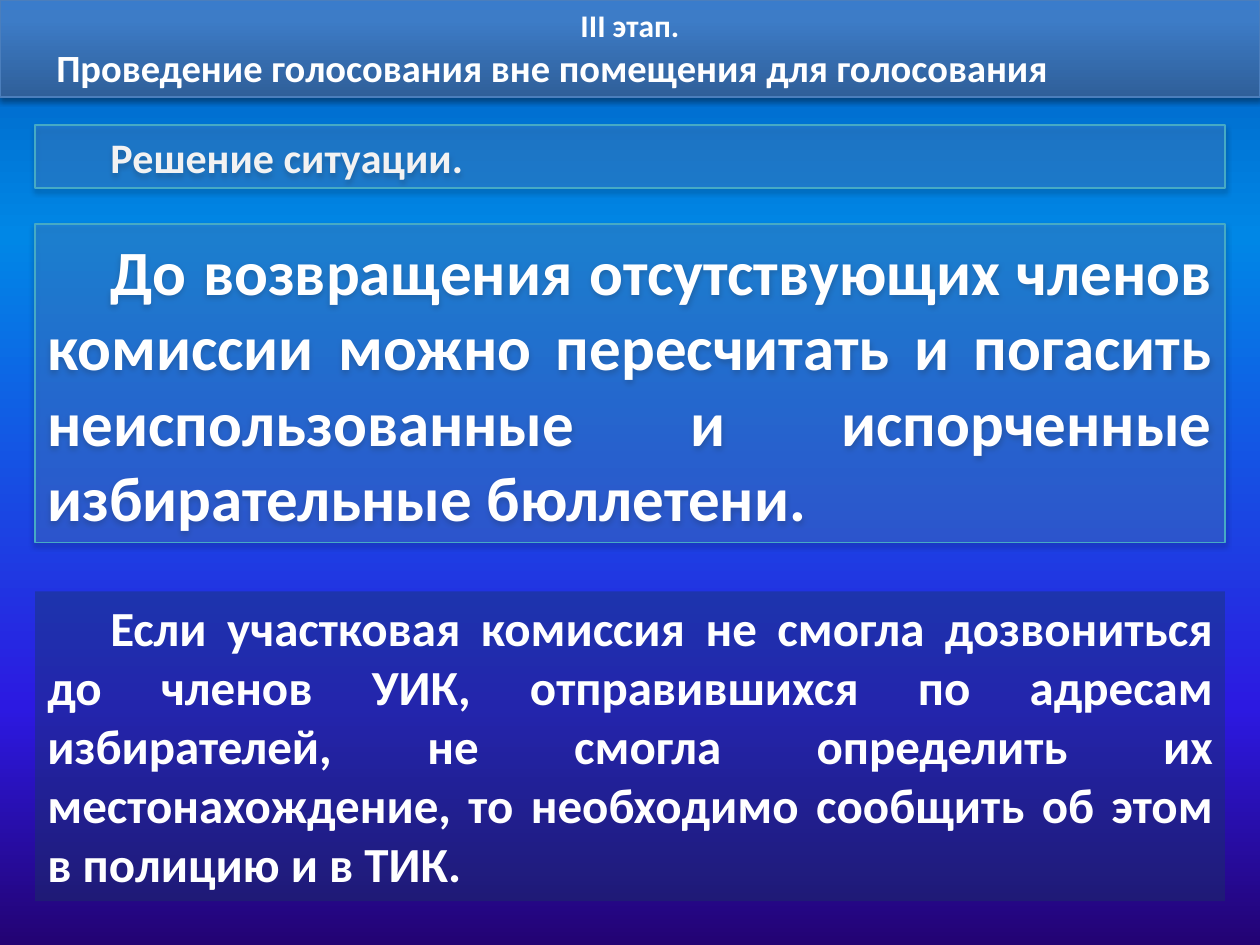
from dataclasses import dataclass

from lxml.etree import SubElement
from pptx import Presentation
from pptx.dml.color import RGBColor
from pptx.enum.shapes import MSO_SHAPE as Shape
from pptx.enum.text import MSO_ANCHOR as Anchor, MSO_AUTO_SIZE as AutoSize, PP_ALIGN as Align
from pptx.oxml.ns import qn
from pptx.util import Pt


@dataclass(frozen=True)
class Theme:
    font: str = "Calibri"
    white: str = "FFFFFF"
    soft_white: str = "F2F2F2"
    panel: str = "558ED5"
    panel_line: str = "46AAC5"
    note: str = "17375E"
    header_line: str = "4B7EBC"
    header: tuple = ((0, "2F5F99"), (80, "3D7CC7"), (100, "3A7CCB"))
    background: tuple = ((0, "230373"), (25, "2C19E1"), (75, "0087E6"), (100, "005CBF"))
    stage_size: int = 18
    title_size: int = 22
    heading_size: int = 24
    note_size: int = 28
    answer_size: int = 36


def write(paragraph, text, *, size, color, font, align=Align.LEFT, indent=0):
    """Fill a paragraph with one bold run."""
    properties = paragraph._p.get_or_add_pPr()
    properties.set("marL", "0")
    properties.set("indent", str(Pt(indent)))
    paragraph.alignment = align
    run = paragraph.add_run()
    run.text = text
    run.font.name = font
    run.font.size = Pt(size)
    run.font.bold = True
    run.font.color.rgb = RGBColor.from_string(color)


def set_gradient(fill, element, stops):
    """Vertical gradient whose first stop is at the bottom."""
    fill.gradient()
    fill.gradient_angle = 90
    stop_list = element.find(".//" + qn("a:gsLst"))
    stop_list.clear()
    for position, color in stops:
        stop = SubElement(stop_list, qn("a:gs"), pos=str(position * 1000))
        SubElement(stop, qn("a:srgbClr"), val=color)


class SlideBuilder:
    def __init__(self, slide, theme):
        self.slide = slide
        self.theme = theme

    def background(self):
        set_gradient(self.slide.background.fill, self.slide._element, self.theme.background)

    def outline(self, shape, color):
        shape.line.color.rgb = RGBColor.from_string(color)
        shape.line.width = Pt(0.75)

    def shadow(self, shape):
        shape.shadow.inherit = False
        effects = shape._element.spPr.find(qn("a:effectLst"))
        outer = SubElement(effects, qn("a:outerShdw"), blurRad=str(Pt(3.1)),
                           dist=str(Pt(1.8)), dir="5400000", rotWithShape="0")
        color = SubElement(outer, qn("a:srgbClr"), val="000000")
        SubElement(color, qn("a:alpha"), val="35000")

    def header(self, stage, title, width, height):
        theme = self.theme
        shape = self.slide.shapes.title
        shape.left, shape.top, shape.width, shape.height = 0, 0, Pt(width), Pt(height)
        set_gradient(shape.fill, shape._element.spPr, theme.header)
        self.outline(shape, theme.header_line)
        self.shadow(shape)
        frame = shape.text_frame
        frame.auto_size = AutoSize.NONE
        frame.vertical_anchor = Anchor.TOP
        write(frame.paragraphs[0], stage, size=theme.stage_size, color=theme.white,
              font=theme.font, align=Align.CENTER)
        write(frame.add_paragraph(), title, size=theme.title_size, color=theme.white,
              font=theme.font, indent=25)

    def panel(self, text, top, height, *, size, color, fill, opacity,
              line=None, anchor=Anchor.MIDDLE):
        shape = self.slide.shapes.add_shape(
            Shape.RECTANGLE, Pt(20), Pt(top), Pt(680), Pt(height))
        shape.fill.solid()
        shape.fill.fore_color.rgb = RGBColor.from_string(fill)
        fill_color = shape._element.spPr.find(qn("a:solidFill"))[0]
        SubElement(fill_color, qn("a:alpha"), val=str(opacity * 1000))
        if line:
            self.outline(shape, line)
            self.shadow(shape)
        else:
            shape.line.fill.background()
            shape.shadow.inherit = False
        frame = shape.text_frame
        frame.word_wrap = True
        frame.auto_size = AutoSize.SHAPE_TO_FIT_TEXT
        frame.vertical_anchor = anchor
        write(frame.paragraphs[0], text, size=size, color=color, font=self.theme.font,
              align=Align.JUSTIFY, indent=36)


def main():
    theme = Theme()
    presentation = Presentation()
    presentation.slide_width, presentation.slide_height = Pt(720), Pt(540)
    title_only = presentation.slide_layouts[5]
    builder = SlideBuilder(presentation.slides.add_slide(title_only), theme)
    builder.background()

    # Header band
    builder.header("III этап.", "Проведение голосования вне помещения для голосования",
                   width=720, height=55.5)

    # Heading and answer
    glass = dict(fill=theme.panel, opacity=33, line=theme.panel_line)
    builder.panel("Решение ситуации.", 71.5, 36,
                  size=theme.heading_size, color=theme.soft_white, **glass)
    builder.panel("До возвращения отсутствующих членов комиссии можно пересчитать и погасить "
                  "неиспользованные и испорченные избирательные бюллетени.", 128, 182,
                  size=theme.answer_size, color=theme.white, **glass)

    # Further advice
    builder.panel("Если участковая комиссия не смогла дозвониться до членов УИК, отправившихся "
                  "по адресам избирателей, не смогла определить их местонахождение, "
                  "то необходимо сообщить об этом в полицию и в ТИК.", 338, 177,
                  size=theme.note_size, color=theme.white, fill=theme.note, opacity=40,
                  anchor=Anchor.TOP)

    presentation.save("out.pptx")


if __name__ == "__main__":
    main()
